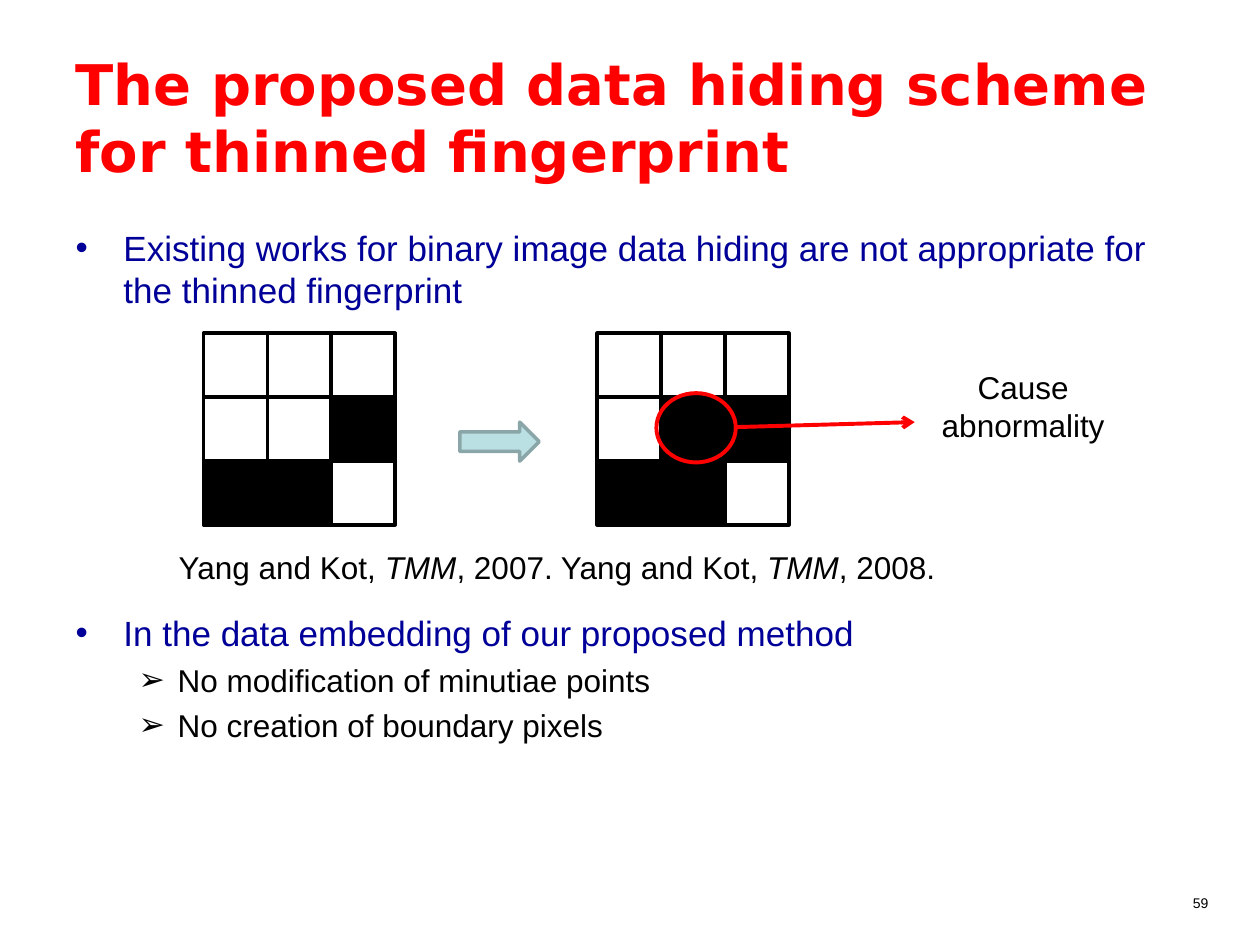
from dataclasses import dataclass
from typing import NamedTuple

from lxml import etree
from pptx import Presentation
from pptx import util as u
from pptx.dml.color import RGBColor
from pptx.enum import shapes, text
from pptx.oxml import ns

COLS, ROWS = 100, 75


@dataclass(frozen=True)
class Theme:
    head: str = "DejaVu Sans"
    body: str = "Arial"
    red: str = "FF0000"
    navy: str = "000099"
    black: str = "000000"
    white: str = "FFFFFF"
    teal: str = "BBE0E3"
    edge: str = "8AA6A8"
    big: float = 32
    mid: float = 20
    small: float = 18
    tiny: float = 8
    thin: float = 2
    bold: float = 2.25


class Box(NamedTuple):
    x: float
    y: float
    w: float
    h: float


class Run(NamedTuple):
    text: str
    slant: bool = False


class Item(NamedTuple):
    text: str
    mark: str
    level: int
    left: float
    hang: float
    gap: float
    size: float
    color: str


class Board(NamedTuple):
    x: float
    y: float
    cells: tuple[str, ...]


T = Theme()
CELL = 5.07
ITEMS = (
    Item("Existing works for binary image data hiding are not appropriate for the thinned fingerprint",
         "•", 0, 0.38, 0.38, 0, T.mid, T.navy),
    Item("In the data embedding of our proposed method",
         "•", 0, 0.38, 0.38, 172, T.mid, T.navy),
    Item("No modification of minutiae points",
         "➢", 1, 0.81, 0.31, 4, T.small, T.black),
    Item("No creation of boundary pixels",
         "➢", 1, 0.81, 0.31, 4, T.small, T.black),
)
BOARDS = (
    Board(16.15, 26.45, ("...", "..#", "##.")),
    Board(47.4, 26.45, ("...", ".##", "##.")),
)
CITE = (Run("Yang and Kot, "), Run("TMM", True), Run(", 2007. Yang and Kot, "),
        Run("TMM", True), Run(", 2008."))

deck = Presentation()
deck.slide_width, deck.slide_height = u.Inches(10), u.Inches(7.5)
slide = deck.slides.add_slide(deck.slide_layouts[1])


def pos(x: float, y: float) -> tuple[int, int]:
    return int(deck.slide_width * x / COLS), int(deck.slide_height * y / ROWS)


def place(box: Box) -> tuple[int, int, int, int]:
    return pos(box.x, box.y) + pos(box.w, box.h)


def move(shape, box: Box) -> None:
    shape.left, shape.top, shape.width, shape.height = place(box)


def write(para, run: Run, size: float, color: str, face: str = T.body, bold: bool = False) -> None:
    part = para.add_run()
    part.text = run.text
    font = part.font
    font.name, font.size = face, u.Pt(size)
    font.bold, font.italic = bold, run.slant
    font.color.rgb = RGBColor.from_string(color)


def bullet(para, item: Item) -> None:
    props = para._p.get_or_add_pPr()
    props.set("marL", str(u.Inches(item.left)))
    props.set("indent", str(-u.Inches(item.hang)))
    etree.SubElement(props, ns.qn("a:buFont")).set("typeface", T.body)
    etree.SubElement(props, ns.qn("a:buChar")).set("char", item.mark)


def stroke(line, color: str, width: float) -> None:
    line.color.rgb = RGBColor.from_string(color)
    line.width = u.Pt(width)


def draw(home, kind, box: Box, fill: str | None, edge: str, width: float) -> None:
    shape = home.add_shape(kind, *place(box))
    shape.shadow.inherit = False
    if fill:
        shape.fill.solid()
        shape.fill.fore_color.rgb = RGBColor.from_string(fill)
    else:
        shape.fill.background()
    stroke(shape.line, edge, width)


def board(plan: Board) -> None:
    group = slide.shapes.add_group_shape()
    for row, line in enumerate(plan.cells):
        for col, sign in enumerate(line):
            box = Box(plan.x + col * CELL, plan.y + row * CELL, CELL, CELL)
            fill = T.black if sign == "#" else T.white
            draw(group.shapes, shapes.MSO_SHAPE.RECTANGLE, box, fill, T.black, T.thin)


def label(box: Box, runs: tuple[Run, ...], size: float, align, anchor=text.MSO_ANCHOR.TOP) -> None:
    frame = slide.shapes.add_textbox(*place(box)).text_frame
    frame.word_wrap = True
    frame.vertical_anchor = anchor
    para = frame.paragraphs[0]
    para.alignment = align
    for run in runs:
        write(para, run, size, T.black)


def arrow(start: tuple[float, float], end: tuple[float, float]) -> None:
    link = slide.shapes.add_connector(shapes.MSO_CONNECTOR.STRAIGHT, *pos(*start), *pos(*end))
    stroke(link.line, T.red, T.bold)
    etree.SubElement(link.line._get_or_add_ln(), ns.qn("a:tailEnd")).set("type", "arrow")
    etree.SubElement(link._element.spPr, ns.qn("a:effectLst"))


def title() -> None:
    shape = slide.shapes.title
    move(shape, Box(5, 3, 90, 12.5))
    frame = shape.text_frame
    frame.auto_size = text.MSO_AUTO_SIZE.NONE
    frame.vertical_anchor = text.MSO_ANCHOR.MIDDLE
    para = frame.paragraphs[0]
    para.alignment = text.PP_ALIGN.LEFT
    write(para, Run("The proposed data hiding scheme for thinned fingerprint"),
          T.big, T.red, T.head, True)


def body() -> None:
    shape = slide.placeholders[1]
    move(shape, Box(5, 17.5, 90, 49.5))
    frame = shape.text_frame
    frame.auto_size = text.MSO_AUTO_SIZE.NONE
    for index, item in enumerate(ITEMS):
        para = frame.add_paragraph() if index else frame.paragraphs[0]
        para.level = item.level
        bullet(para, item)
        para.space_before = u.Pt(item.gap)
        write(para, Run(item.text), item.size, item.color)


def main() -> None:
    title()
    body()
    for plan in BOARDS:
        board(plan)
    draw(slide.shapes, shapes.MSO_SHAPE.RIGHT_ARROW, Box(36.5, 33.5, 6.3, 3.1), T.teal, T.edge, T.thin)
    draw(slide.shapes, shapes.MSO_SHAPE.OVAL, Box(52.1, 31.2, 6.3, 5.5), None, T.red, T.bold)
    arrow((58.4, 33.9), (72.6, 33.5))
    label(Box(72.6, 30.2, 17.2, 5.5), (Run("Cause abnormality"),), T.small,
          text.PP_ALIGN.CENTER, text.MSO_ANCHOR.BOTTOM)
    label(Box(13.2, 43, 65.5, 4), CITE, T.small, text.PP_ALIGN.LEFT)
    label(Box(93, 70.5, 4.6, 2.3), (Run("59"),), T.tiny, text.PP_ALIGN.CENTER)
    deck.save("out.pptx")


if __name__ == "__main__":
    main()
